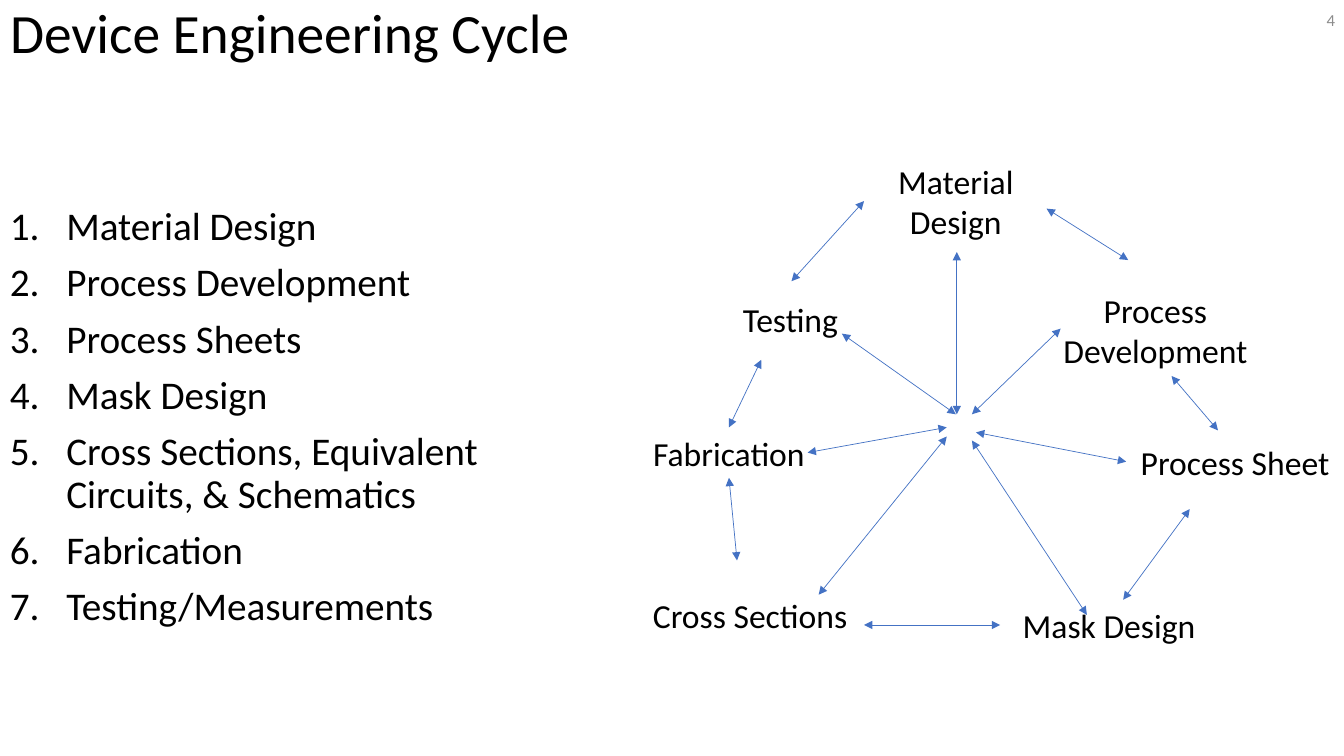
from dataclasses import dataclass

from lxml.etree import SubElement
from pptx import Presentation
from pptx.dml.color import RGBColor
from pptx.enum.shapes import MSO_CONNECTOR
from pptx.enum.text import MSO_ANCHOR, MSO_AUTO_SIZE, PP_ALIGN
from pptx.oxml.ns import qn
from pptx.util import Pt

PX = 9144  # 100 px to the inch


@dataclass(frozen=True)
class Theme:
    font: str = "Calibri"
    text: RGBColor = RGBColor(0x00, 0x00, 0x00)
    muted: RGBColor = RGBColor(0x8C, 0x8C, 0x8C)
    arrow: RGBColor = RGBColor(0x44, 0x72, 0xC4)
    title_size: float = 39.6
    list_size: float = 28
    stage_size: float = 24
    number_size: float = 12
    arrow_width: float = 0.5


THEME = Theme()
TOP, LEFT, BOTTOM = 0, 1, 2

STEPS = [
    "Material Design",
    "Process Development",
    "Process Sheets",
    "Mask Design",
    "Cross Sections, Equivalent Circuits, & Schematics",
    "Fabrication",
    "Testing/Measurements",
]

# Stage boxes and arrow ends are relative to the cycle's box.
STAGES = {
    "Material Design": (242, 0, 182, 91),
    "Fabrication": (0, 270, 216, 50),
    "Process Sheet": (502, 279, 216, 50),
    "Mask Design": (377, 441, 216, 50),
    "Cross Sections": (21, 431, 216, 50),
    "Process Development": (423, 128, 216, 91),
    "Testing": (61, 138, 216, 50),
}

# An end is a point, or a stage with the side it joins.
RIM_ARROWS = [
    (("Fabrication", TOP), (140, 203)),
    ((170, 125), ("Material Design", LEFT)),
    ((504, 104), (423, 53)),
    ((116, 402), ("Fabrication", BOTTOM)),
    ((242, 466), ("Mask Design", LEFT)),
    ((499, 441), (565, 351)),
    ((593, 273), (547, 219)),
]
SPOKES = [
    ((334, 257), (334, 96)),
    ((333, 257), (220, 177)),
    ((349, 257), (437, 172)),
    ((324, 270), (186, 295)),
    ((197, 436), (324, 279)),
    ((463, 456), (349, 283)),
    (("Process Sheet", LEFT), (353, 275)),
]


def add_run(p, text, size, color=THEME.text):
    r = p.add_run()
    r.text = text
    r.font.name = THEME.font
    r.font.size = Pt(size)
    r.font.color.rgb = color


def place(sp, box):
    sp.left, sp.top, sp.width, sp.height = (v * PX for v in box)


def add_box(s, box, anchor=MSO_ANCHOR.MIDDLE):
    sp = s.shapes.add_textbox(*(v * PX for v in box))
    sp.text_frame.word_wrap = True
    sp.text_frame.vertical_anchor = anchor
    return sp


def add_title(s, box, text):
    sp = s.shapes.title
    place(sp, box)
    tf = sp.text_frame
    tf.auto_size = MSO_AUTO_SIZE.NONE
    tf.vertical_anchor = MSO_ANCHOR.MIDDLE
    p = tf.paragraphs[0]
    p.alignment = PP_ALIGN.LEFT
    p.line_spacing = 0.9
    add_run(p, text, THEME.title_size)


def add_slide_number(s, box, number):
    p = add_box(s, box).text_frame.paragraphs[0]
    p.alignment = PP_ALIGN.RIGHT
    add_run(p, str(number), THEME.number_size, THEME.muted)


def add_numbered_list(s, box, items, indent=56):
    tf = add_box(s, box, MSO_ANCHOR.TOP).text_frame
    for i, item in enumerate(items):
        p = tf.add_paragraph() if i else tf.paragraphs[0]
        p.line_spacing = 0.9
        p.space_before = Pt(10)
        pPr = p._p.get_or_add_pPr()
        pPr.set("marL", str(indent * PX))
        pPr.set("indent", str(-indent * PX))
        SubElement(pPr, qn("a:buFont"), typeface="+mj-lt")
        SubElement(pPr, qn("a:buAutoNum"), type="arabicPeriod")
        add_run(p, item, THEME.list_size)


def add_stage(s, box, text):
    sp = add_box(s, box)
    sp.text_frame.auto_size = MSO_AUTO_SIZE.SHAPE_TO_FIT_TEXT
    p = sp.text_frame.paragraphs[0]
    p.alignment = PP_ALIGN.CENTER
    add_run(p, text, THEME.stage_size)
    return sp


def add_double_arrow(s, origin, begin, end, stages):
    x, y = origin
    joined = [e[0] in stages for e in (begin, end)]
    points = [
        (0, 0) if join else ((x + e[0]) * PX, (y + e[1]) * PX)
        for e, join in zip((begin, end), joined)
    ]
    cxn = s.shapes.add_connector(MSO_CONNECTOR.STRAIGHT, *points[0], *points[1])
    if joined[0]:
        cxn.begin_connect(stages[begin[0]], begin[1])
    if joined[1]:
        cxn.end_connect(stages[end[0]], end[1])
    cxn.line.color.rgb = THEME.arrow
    cxn.line.width = Pt(THEME.arrow_width)
    ln = cxn.line._get_or_add_ln()
    for tag in ("a:headEnd", "a:tailEnd"):
        SubElement(ln, qn(tag), type="triangle")
    SubElement(cxn._element.spPr, qn("a:effectLst"))


def add_cycle(s, box):
    x, y = box[:2]
    stages = {
        name: add_stage(s, (x + dx, y + dy, w, h), name)
        for name, (dx, dy, w, h) in STAGES.items()
    }
    for begin, end in RIM_ARROWS + SPOKES:
        add_double_arrow(s, (x, y), begin, end, stages)


def main():
    prs = Presentation()
    prs.slide_width, prs.slide_height = 1333 * PX, 750 * PX
    s = prs.slides.add_slide(prs.slide_layouts[5])
    add_title(s, (0, 0, 1333, 70), "Device Engineering Cycle")
    add_numbered_list(s, (0, 200, 523, 550), STEPS)
    add_slide_number(s, (1293, 0, 41, 40), 4)
    add_cycle(s, (615, 154, 718, 491))
    prs.save("out.pptx")


if __name__ == "__main__":
    main()
